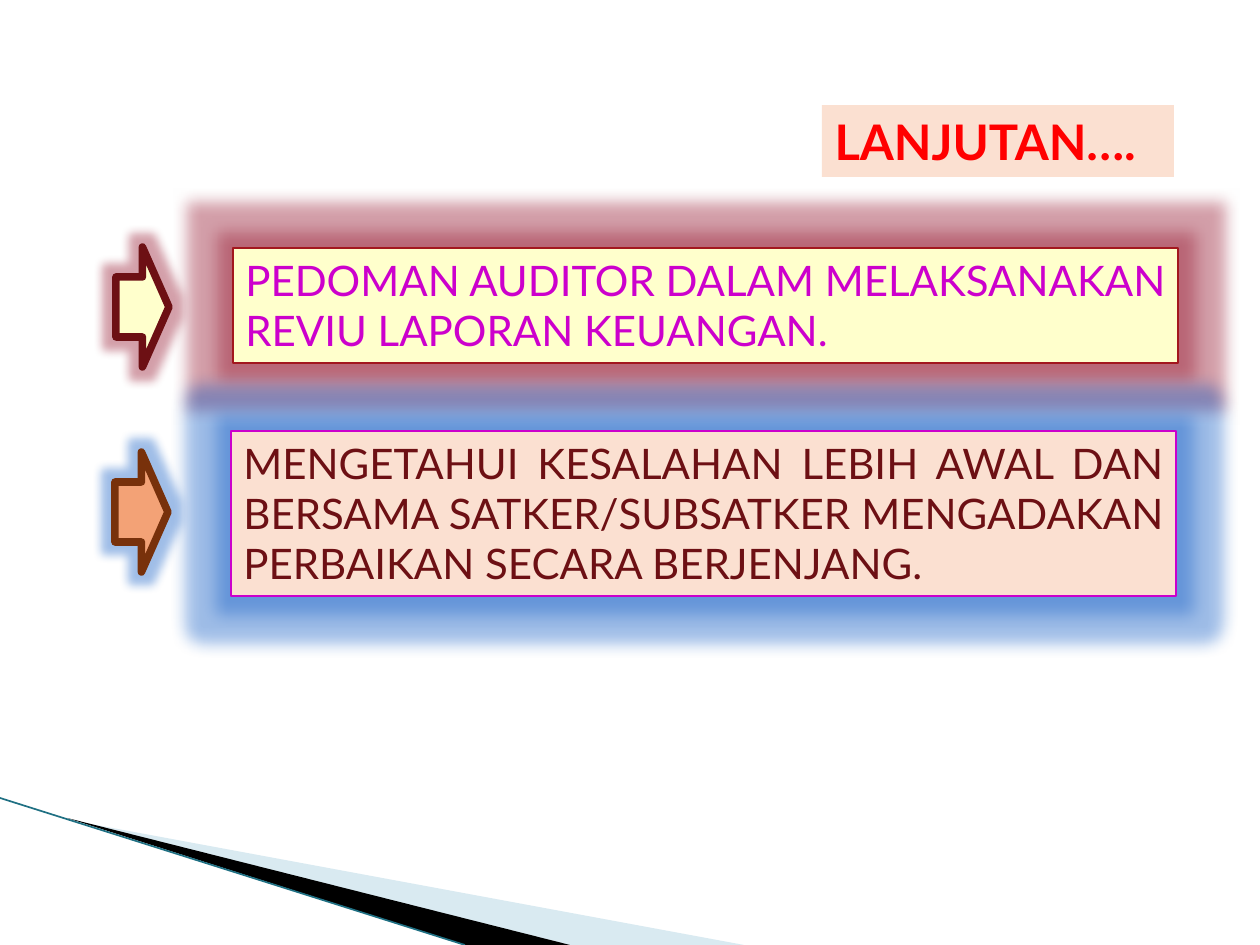
"""Build the continuation slide with two glowing statements and their arrows."""
from dataclasses import dataclass

from lxml.etree import SubElement
from pptx import Presentation
from pptx.dml.color import RGBColor
from pptx.enum.shapes import MSO_CONNECTOR as Connector, MSO_SHAPE as Shape
from pptx.enum.text import MSO_ANCHOR as Anchor, MSO_AUTO_SIZE as AutoSize, PP_ALIGN as Align
from pptx.oxml.ns import qn
from pptx.util import Emu, Pt

SCALE = 914400 / 126


@dataclass(frozen=True)
class Theme:
    font: str = "Lato"
    title_size: int = 28
    body_size: int = 24
    title: str = "FF0000"
    peach: str = "FBE0D1"
    cream: str = "FFFFCC"
    orange: str = "F3A276"
    brown: str = "78310B"
    maroon: str = "6D1014"
    red: str = "A3171E"
    magenta: str = "CC00CC"
    red_glow: str = "93112A"
    blue_glow: str = "115CC5"
    pale_blue: str = "D9EAF1"
    black: str = "000000"
    teal: str = "1F7083"


def px(*lengths):
    return [Emu(round(length * SCALE)) for length in lengths]


def style(shape, fill, line, width, glow, radius):
    shape.fill.solid()
    shape.fill.fore_color.rgb = RGBColor.from_string(fill)
    shape.line.color.rgb = RGBColor.from_string(line)
    shape.line.width = Pt(width)
    SubElement(shape.line._get_or_add_ln(), qn("a:round"))
    effects = SubElement(shape._element.spPr, qn("a:effectLst"))
    halo = SubElement(effects, qn("a:glow"), rad=str(Pt(radius)))
    color = SubElement(halo, qn("a:srgbClr"), val=glow)
    SubElement(color, qn("a:alpha"), val="40000")


theme = Theme()
presentation = Presentation()
presentation.slide_width, presentation.slide_height = px(1260, 945)
slide = presentation.slides.add_slide(presentation.slide_layouts[5])
shapes = slide.shapes

wedges = [
    ([(69, 820), (744, 945), (570, 945)], theme.pale_blue),
    ([(67, 818), (570, 945), (465, 945)], theme.black),
]
for points, color in wedges:
    builder = shapes.build_freeform(*points[0], scale=SCALE)
    builder.add_line_segments(points[1:])
    wedge = builder.convert_to_shape()
    wedge.shadow.inherit = False
    wedge.fill.solid()
    wedge.fill.fore_color.rgb = RGBColor.from_string(color)
    wedge.line.fill.background()

edge = shapes.add_connector(Connector.STRAIGHT, *px(0, 798, 465, 945))
edge.line.color.rgb = RGBColor.from_string(theme.teal)
edge.line.width = Pt(0.95)
SubElement(edge._element.spPr, qn("a:effectLst"))

title = shapes.title
title.left, title.top, title.width, title.height = px(822, 105, 352, 72)
title.fill.solid()
title.fill.fore_color.rgb = RGBColor.from_string(theme.peach)
title.text_frame.word_wrap = False
title.text_frame.auto_size = AutoSize.NONE
title.text_frame.vertical_anchor = Anchor.MIDDLE
paragraph = title.text_frame.paragraphs[0]
paragraph.alignment = Align.LEFT
run = paragraph.add_run()
run.text = "LANJUTAN…."
run.font.name = theme.font
run.font.size = Pt(theme.title_size)
run.font.bold = True
run.font.color.rgb = RGBColor.from_string(theme.title)

statements = [
    ("PEDOMAN AUDITOR DALAM MELAKSANAKAN REVIU LAPORAN KEUANGAN.",
     (233, 248, 945, 115), theme.cream, theme.red, theme.magenta,
     (116, 247, 53, 120), theme.cream, theme.maroon, theme.red_glow),
    ("MENGETAHUI KESALAHAN LEBIH AWAL DAN BERSAMA SATKER/SUBSATKER MENGADAKAN "
     "PERBAIKAN SECARA BERJENJANG.",
     (231, 431, 945, 165), theme.peach, theme.magenta, theme.maroon,
     (115, 452, 53, 120), theme.orange, theme.brown, theme.blue_glow),
]
for text, place, fill, line, ink, arrow_place, arrow_fill, arrow_line, glow in statements:
    box = shapes.add_shape(Shape.RECTANGLE, *px(*place))
    style(box, fill, line, 0.75, glow, 18)
    frame = box.text_frame
    frame.word_wrap = True
    frame.auto_size = AutoSize.SHAPE_TO_FIT_TEXT
    frame.vertical_anchor = Anchor.TOP
    paragraph = frame.paragraphs[0]
    paragraph.alignment = Align.JUSTIFY
    run = paragraph.add_run()
    run.text = text
    run.font.name = theme.font
    run.font.size = Pt(theme.body_size)
    run.font.color.rgb = RGBColor.from_string(ink)

    arrow = shapes.add_shape(Shape.RIGHT_ARROW, *px(*arrow_place))
    style(arrow, arrow_fill, arrow_line, 4.33, glow, 11)

presentation.save("out.pptx")
